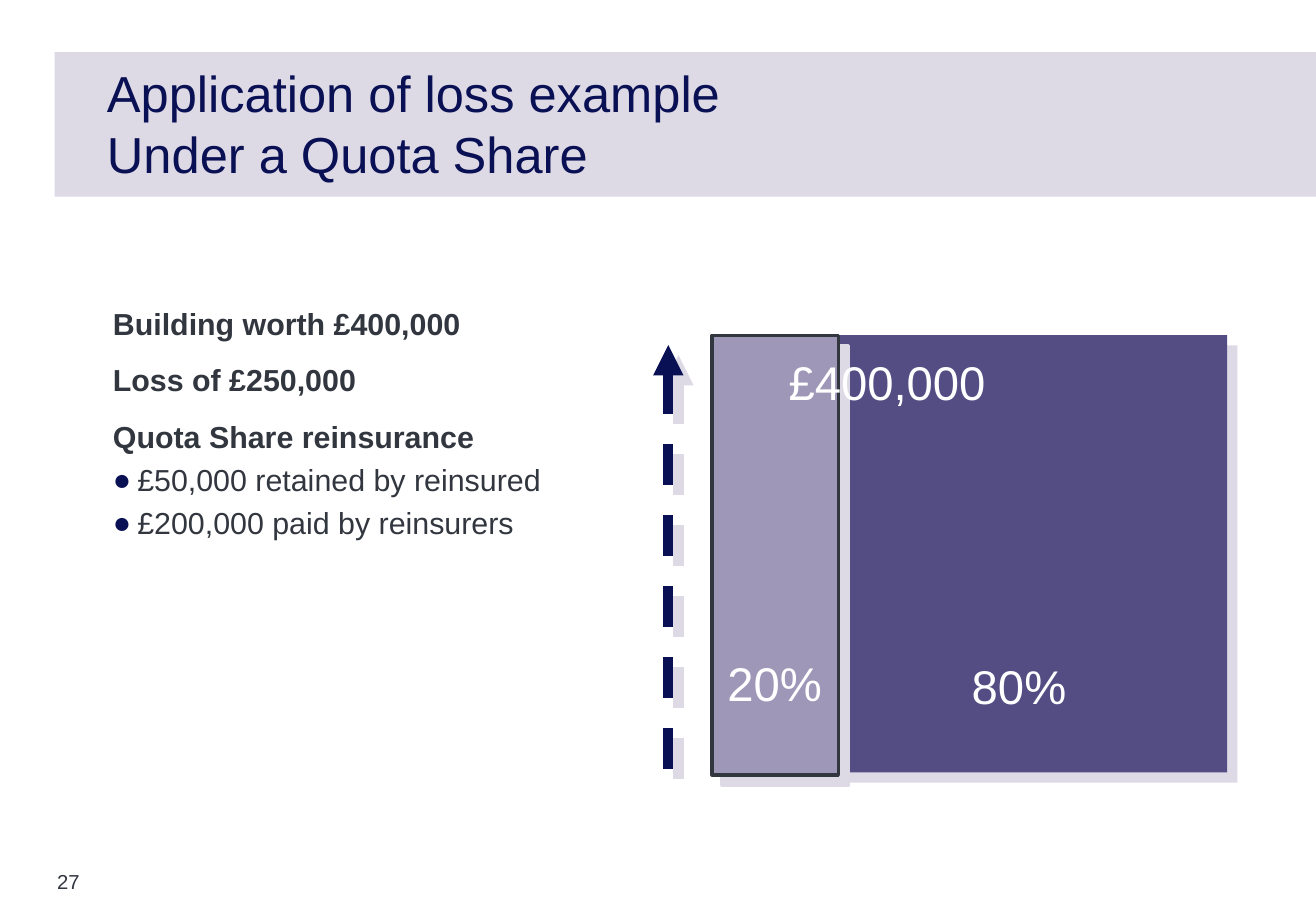
"""Build the quota share loss example slide."""
from dataclasses import dataclass
from typing import Any, Optional

from lxml.etree import SubElement
from pptx import Presentation
from pptx.dml.color import RGBColor
from pptx.enum.dml import MSO_LINE
from pptx.enum.shapes import MSO_CONNECTOR, MSO_SHAPE
from pptx.enum.text import MSO_ANCHOR, MSO_AUTO_SIZE, PP_ALIGN
from pptx.oxml.ns import qn
from pptx.util import Inches, Pt

NAVY = RGBColor(0x0A, 0x10, 0x54)
INK = RGBColor(0x32, 0x36, 0x3F)
WHITE = RGBColor(0xFF, 0xFF, 0xFF)
PALE = RGBColor(0xDD, 0xDA, 0xE6)
PURPLE = RGBColor(0x53, 0x4D, 0x84)
LILAC = RGBColor(0x9E, 0x97, 0xB8)


@dataclass
class Block:
    left: float
    top: float
    width: float
    height: float
    fill: RGBColor
    outline: Optional[RGBColor] = None
    shadow: bool = True


@dataclass
class Label:
    text: str
    left: float
    top: float
    width: float


@dataclass
class Point:
    text: str
    bullet: bool = False


BAND = Block(0.45, 0.43, 10.38, 1.19, PALE, shadow=False)
SHARES = [
    Block(6.87, 2.76, 3.23, 3.6, PURPLE),
    Block(5.86, 2.76, 1.04, 3.62, LILAC, outline=INK),
]
LABELS = [
    Label("20%", 5.88, 5.34, 0.99),
    Label("80%", 7.89, 5.36, 0.99),
    Label("£400,000", 6.38, 2.86, 1.84),
]
POINTS = [
    Point("Building worth £400,000"),
    Point("Loss of £250,000"),
    Point("Quota Share reinsurance"),
    Point("£50,000 retained by reinsured", bullet=True),
    Point("£200,000 paid by reinsurers", bullet=True),
]


def write(paragraph: Any, text: str, *, size: float, color: RGBColor, bold: bool = False,
          align: PP_ALIGN = PP_ALIGN.LEFT, before: float = 0) -> None:
    """Fill a paragraph with formatted text."""
    paragraph.text = text
    paragraph.alignment = align
    paragraph.space_before = Pt(before)
    for run in paragraph.runs:
        run.font.name = "Arial"
        run.font.size = Pt(size)
        run.font.bold = bold
        run.font.color.rgb = color


def prepare_frame(shape: Any, *, margin_x: float = 0, margin_y: float = 0, wrap: bool = True) -> Any:
    """Set margins and wrapping and return the text frame."""
    frame = shape.text_frame
    frame.margin_left = frame.margin_right = Inches(margin_x)
    frame.margin_top = frame.margin_bottom = Inches(margin_y)
    frame.word_wrap = wrap
    frame.auto_size = MSO_AUTO_SIZE.NONE
    return frame


def add_text_frame(slide: Any, left: float, top: float, width: float, height: float, **layout: Any) -> Any:
    """Add a text box and return its frame."""
    box = slide.shapes.add_textbox(Inches(left), Inches(top), Inches(width), Inches(height))
    return prepare_frame(box, **layout)


def add_shadow(properties: Any) -> None:
    """Append a hard pale shadow to shape properties."""
    effects = SubElement(properties, qn("a:effectLst"))
    shadow = SubElement(effects, qn("a:outerShdw"), dist=str(Pt(8.5)), dir="2700000",
                        algn="ctr", rotWithShape="0")
    SubElement(shadow, qn("a:srgbClr"), val=str(PALE))


def add_block(slide: Any, block: Block) -> Any:
    """Draw a filled rectangle."""
    rectangle = slide.shapes.add_shape(MSO_SHAPE.RECTANGLE, Inches(block.left), Inches(block.top),
                                       Inches(block.width), Inches(block.height))
    rectangle.fill.solid()
    rectangle.fill.fore_color.rgb = block.fill
    if block.outline is None:
        rectangle.line.fill.background()
    else:
        rectangle.line.color.rgb = block.outline
        rectangle.line.width = Pt(2)
    if block.shadow:
        add_shadow(rectangle._element.spPr)
    else:
        rectangle.shadow.inherit = False
    return rectangle


def add_loss_arrow(slide: Any) -> None:
    """Draw the dashed upward arrow beside the shares."""
    arrow = slide.shapes.add_connector(MSO_CONNECTOR.STRAIGHT, Inches(5.5), Inches(2.84),
                                       Inches(5.5), Inches(6.4))
    arrow.line.color.rgb = NAVY
    arrow.line.width = Pt(6)
    arrow.line.dash_style = MSO_LINE.DASH
    SubElement(arrow.line._get_or_add_ln(), qn("a:headEnd"), type="triangle")
    add_shadow(arrow._element.spPr)


def add_bullet(paragraph: Any) -> None:
    """Give a paragraph a hanging round bullet."""
    properties = paragraph._p.get_or_add_pPr()
    properties.set("marL", str(Inches(0.2)))
    properties.set("indent", str(-Inches(0.2)))
    color = SubElement(properties, qn("a:buClr"))
    SubElement(color, qn("a:srgbClr"), val=str(NAVY))
    SubElement(properties, qn("a:buFont"), typeface="Arial")
    SubElement(properties, qn("a:buChar"), char="●")


def add_points(slide: Any) -> None:
    """Write the loss details and their split."""
    frame = add_text_frame(slide, 0.93, 2.51, 4.47, 4.37)
    for index, point in enumerate(POINTS):
        paragraph = frame.add_paragraph() if index else frame.paragraphs[0]
        if point.bullet:
            add_bullet(paragraph)
        before = 4 if point.bullet else 12
        write(paragraph, point.text, size=18, color=INK, bold=not point.bullet,
              before=before if index else 0)


def set_title(slide: Any) -> None:
    """Place the title over its band."""
    title = slide.shapes.title
    title.left, title.top, title.width, title.height = map(Inches, (0.88, 0.26, 9.23, 1.25))
    frame = prepare_frame(title)
    frame.vertical_anchor = MSO_ANCHOR.BOTTOM
    write(frame.paragraphs[0], "Application of loss example\vUnder a Quota Share", size=30, color=NAVY)
    band = add_block(slide, BAND)
    title._element.addprevious(band._element)


def main() -> None:
    """Build and save the slide."""
    deck = Presentation()
    deck.slide_width, deck.slide_height = Inches(10.83), Inches(7.5)
    slide = deck.slides.add_slide(deck.slide_layouts[5])
    set_title(slide)
    page_number = add_text_frame(slide, 0.47, 7.16, 0.39, 0.26)
    write(page_number.paragraphs[0], "27", size=12, color=INK)
    add_points(slide)
    for share in SHARES:
        add_block(slide, share)
    add_loss_arrow(slide)
    for label in LABELS:
        frame = add_text_frame(slide, label.left, label.top, label.width, 0.57,
                               margin_x=0.1, margin_y=0.05, wrap=False)
        write(frame.paragraphs[0], label.text, size=28, color=WHITE, align=PP_ALIGN.CENTER)
    deck.save("out.pptx")


if __name__ == "__main__":
    main()
